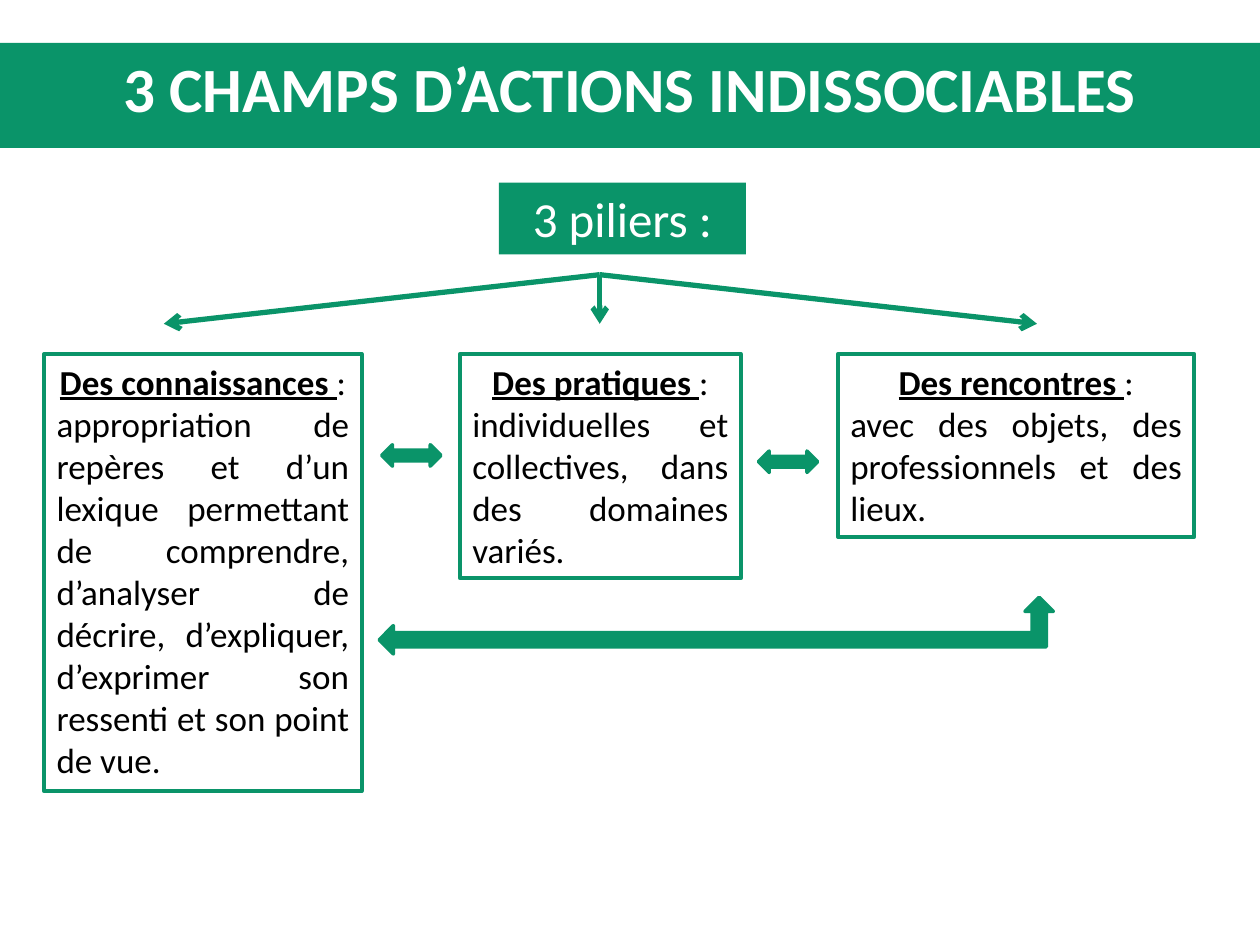
from lxml import etree
from pptx import Presentation
from pptx.dml.color import RGBColor
from pptx.enum import shapes, text
from pptx.oxml.ns import qn
from pptx.util import Inches, Pt

GREEN = RGBColor(0x0A, 0x94, 0x69)
WHITE = RGBColor(0xFF, 0xFF, 0xFF)
BLACK = RGBColor(0, 0, 0)
FONT = "Calibri"

PILLAR_TOP = 2.81
PILLARS = [  # left, width, height, heading, description
    (0.35, 2.52, 3.47, "Des connaissances ",
     "appropriation de repères et d’un lexique permettant de comprendre, "
     "d’analyser de décrire, d’expliquer, d’exprimer son ressenti et son "
     "point de vue."),
    (3.65, 2.23, 1.78, "Des pratiques ",
     "individuelles et collectives, dans des domaines variés."),
    (6.65, 2.83, 1.45, "Des rencontres ",
     "avec des objets, des professionnels et des lieux."),
]
BRANCH_START = (4.76, 2.18)
BRANCH_END_Y = 2.57
BRANCH_END_XS = (1.3, 4.76, 8.23)
ARROWS = [
    (shapes.MSO_SHAPE.LEFT_RIGHT_ARROW, (3.03, 3.53, 0.47, 0.17)),
    (shapes.MSO_SHAPE.LEFT_RIGHT_ARROW, (6.02, 3.58, 0.47, 0.17)),
    (shapes.MSO_SHAPE.LEFT_UP_ARROW, (3.01, 4.74, 5.35, 0.45)),
]


def fill_green(shape):
    shape.fill.solid()
    shape.fill.fore_color.rgb = GREEN


def add_run(paragraph, words, size, color, bold=False, underline=False):
    run = paragraph.add_run()
    run.text = words
    font = run.font
    font.name, font.size, font.color.rgb = FONT, Pt(size), color
    font.bold, font.underline = bold, underline


def prepare_frame(shape):
    """Wrap the text from the top of the shape and return its first paragraph."""
    frame = shape.text_frame
    frame.word_wrap = True
    frame.auto_size = text.MSO_AUTO_SIZE.SHAPE_TO_FIT_TEXT
    frame.vertical_anchor = text.MSO_ANCHOR.TOP
    heading = frame.paragraphs[0]
    heading.alignment = text.PP_ALIGN.CENTER
    return heading


def add_text_box(slide, left, top, width, height):
    return slide.shapes.add_textbox(
        Inches(left), Inches(top), Inches(width), Inches(height))


def add_title(slide, words):
    title = slide.shapes.title
    title.left, title.top = Inches(0), Inches(0.34)
    title.width, title.height = Inches(10), Inches(0.71)
    fill_green(title)
    add_run(prepare_frame(title), words, 36, WHITE, bold=True)


def add_label(slide, words):
    label = add_text_box(slide, 3.96, 1.45, 1.96, 0.57)
    fill_green(label)
    add_run(prepare_frame(label), words, 28, WHITE)


def add_pillar(slide, left, width, height, name, description):
    pillar = add_text_box(slide, left, PILLAR_TOP, width, height)
    pillar.line.color.rgb = GREEN
    pillar.line.width = Pt(2.25)
    heading = prepare_frame(pillar)
    add_run(heading, name, 20, BLACK, bold=True, underline=True)
    add_run(heading, ":", 20, BLACK)
    body = pillar.text_frame.add_paragraph()
    body.alignment = text.PP_ALIGN.JUSTIFY
    add_run(body, description, 20, BLACK)


def add_branch(slide, end_x):
    start_x, start_y = BRANCH_START
    branch = slide.shapes.add_connector(
        shapes.MSO_CONNECTOR.STRAIGHT, Inches(start_x), Inches(start_y),
        Inches(end_x), Inches(BRANCH_END_Y))
    branch.line.color.rgb = GREEN
    branch.line.width = Pt(3)
    etree.SubElement(branch.line._get_or_add_ln(), qn("a:tailEnd"), type="arrow")
    etree.SubElement(branch._element.spPr, qn("a:effectLst"))


def add_block_arrow(slide, preset, box):
    arrow = slide.shapes.add_shape(preset, *map(Inches, box))
    arrow.shadow.inherit = False
    fill_green(arrow)
    arrow.line.color.rgb = GREEN
    arrow.line.width = Pt(2)


def main():
    deck = Presentation()
    deck.slide_width, deck.slide_height = Inches(10), Inches(7.5)
    slide = deck.slides.add_slide(deck.slide_layouts.get_by_name("Title Only"))
    add_title(slide, "3 CHAMPS D’ACTIONS INDISSOCIABLES")
    add_label(slide, "3 piliers :")
    for pillar in PILLARS:
        add_pillar(slide, *pillar)
    for end_x in BRANCH_END_XS:
        add_branch(slide, end_x)
    for preset, box in ARROWS:
        add_block_arrow(slide, preset, box)
    deck.save("out.pptx")


if __name__ == "__main__":
    main()
